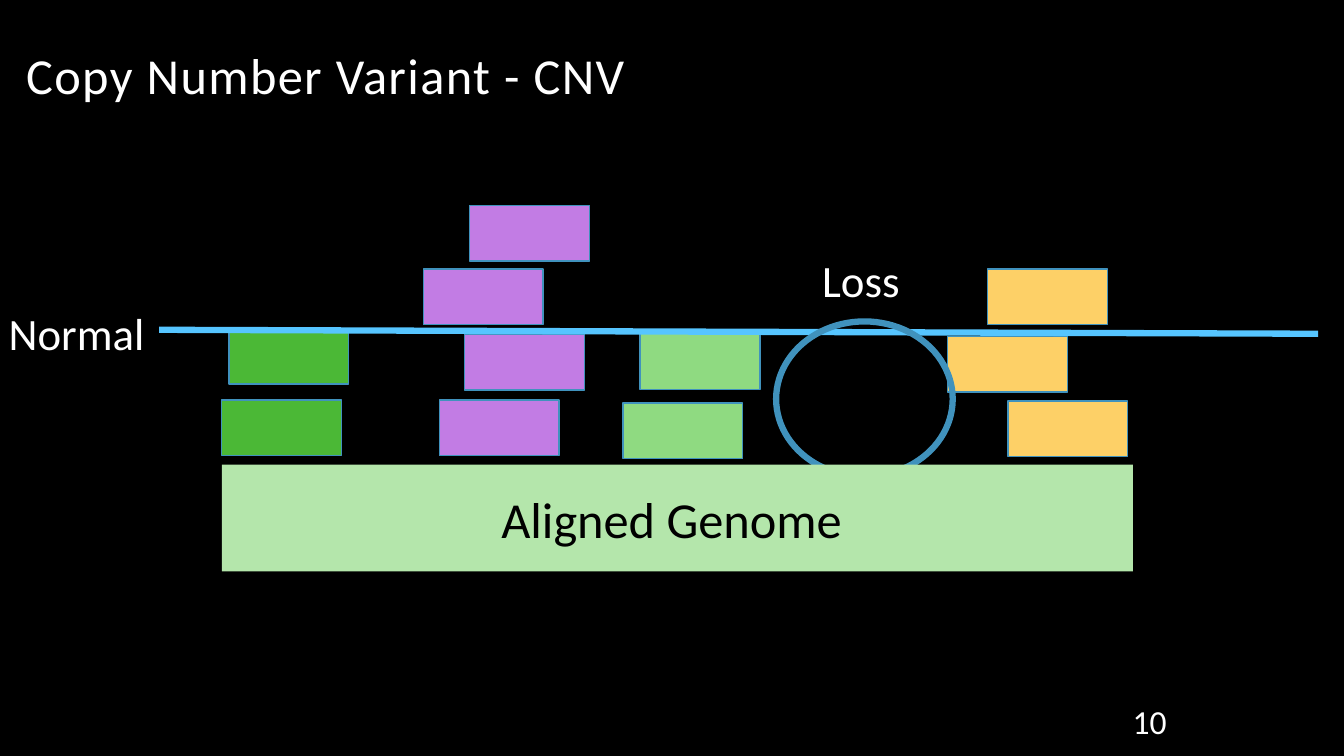
from lxml.etree import SubElement
from pptx import Presentation
from pptx.dml.color import RGBColor
from pptx.enum.shapes import MSO_CONNECTOR, MSO_SHAPE
from pptx.enum.text import MSO_ANCHOR, PP_ALIGN
from pptx.oxml.ns import qn
from pptx.util import Cm, Pt

# Content: lengths in cm, boxes as left, top, width, height
FONT = "Calibri"
BLACK, WHITE = "000000", "FFFFFF"
OUTLINE, BASELINE, GENOME = "4092BD", "56C5FF", "B4E6AB"
READ_SIZE = (3.02, 1.4)
READ_STACKS = {  # colour: left and top of each read, from the bottom up
    "4BB836": [(5.59, 10.08), (5.77, 8.28)],
    "C27CE4": [(11.07, 10.08), (11.71, 8.43), (10.67, 6.78), (11.84, 5.18)],
    "8FDA81": [(15.7, 10.16), (16.13, 8.41)],
    "FDD067": [(25.4, 10.11), (23.88, 8.48), (24.89, 6.78)],
}
NORMAL_LINE = (4.01, 8.31, 33.22, 8.41)  # start x, y, end x, y
LABELS = [("Normal", (-0.03, 7.57, 4.45, 1.63)),
          ("Loss", (20.47, 6.25, 4.45, 1.63))]
LOSS_RING = (19.56, 8.1, 4.45, 3.91)
GENOME_BAR = ("Aligned Genome ", (5.59, 11.71, 22.96, 2.69))
TITLE = ("Copy Number Variant - CNV", (0.41, 0.43, 23.93, 2.34))
PAGE_NUMBER = ("10", (27.31, 17.78, 2.34, 0.76))


def rgb(colour):
    return RGBColor.from_string(colour)


def write(shape, text, size, colour, align=PP_ALIGN.LEFT, anchor=MSO_ANCHOR.TOP):
    frame = shape.text_frame
    frame.text = text
    frame.word_wrap = True
    frame.vertical_anchor = anchor
    paragraph = frame.paragraphs[0]
    paragraph.alignment = align
    font = paragraph.runs[0].font
    font.name, font.size = FONT, Pt(size)
    font.color.rgb = rgb(colour)
    return paragraph


def add_text(box, *args, **kwargs):
    return write(slide.shapes.add_textbox(*map(Cm, box)), *args, **kwargs)


def add_block(kind, box, fill=None, line_width=0):
    block = slide.shapes.add_shape(kind, *map(Cm, box))
    block.shadow.inherit = False
    if fill:
        block.fill.solid()
        block.fill.fore_color.rgb = rgb(fill)
    else:
        block.fill.background()
    if line_width:
        block.line.color.rgb = rgb(OUTLINE)
        block.line.width = Pt(line_width)
    else:
        block.line.fill.background()
    return block


prs = Presentation()
prs.slide_width, prs.slide_height = Cm(33.87), Cm(19.05)
slide = prs.slides.add_slide(prs.slide_layouts[6])
slide.background.fill.solid()
slide.background.fill.fore_color.rgb = rgb(BLACK)

# Title with slightly spaced letters
title_text, title_box = TITLE
title = add_text(title_box, title_text, 36, WHITE, anchor=MSO_ANCHOR.BOTTOM)
title.line_spacing = 0.9
title.runs[0].font._element.set("spc", "100")

# Stacked reads
for colour, positions in READ_STACKS.items():
    for position in positions:
        add_block(MSO_SHAPE.RECTANGLE, position + READ_SIZE, colour, 1)

# Normal coverage line
normal = slide.shapes.add_connector(MSO_CONNECTOR.STRAIGHT, *map(Cm, NORMAL_LINE))
normal.line.color.rgb = rgb(BASELINE)
normal.line.width = Pt(4.5)
SubElement(normal._element.spPr, qn("a:effectLst"))

# Labels, ring around the loss, page number
for label, box in LABELS:
    add_text(box, label, 32, WHITE)
add_block(MSO_SHAPE.OVAL, LOSS_RING, line_width=4.5)
number, number_box = PAGE_NUMBER
add_text(number_box, number, 24, WHITE, PP_ALIGN.RIGHT, MSO_ANCHOR.MIDDLE)

# Genome bar, in front of the ring
genome_text, genome_box = GENOME_BAR
genome = add_block(MSO_SHAPE.RECTANGLE, genome_box, GENOME)
write(genome, genome_text, 36, BLACK, PP_ALIGN.CENTER, MSO_ANCHOR.MIDDLE)

prs.save("out.pptx")
